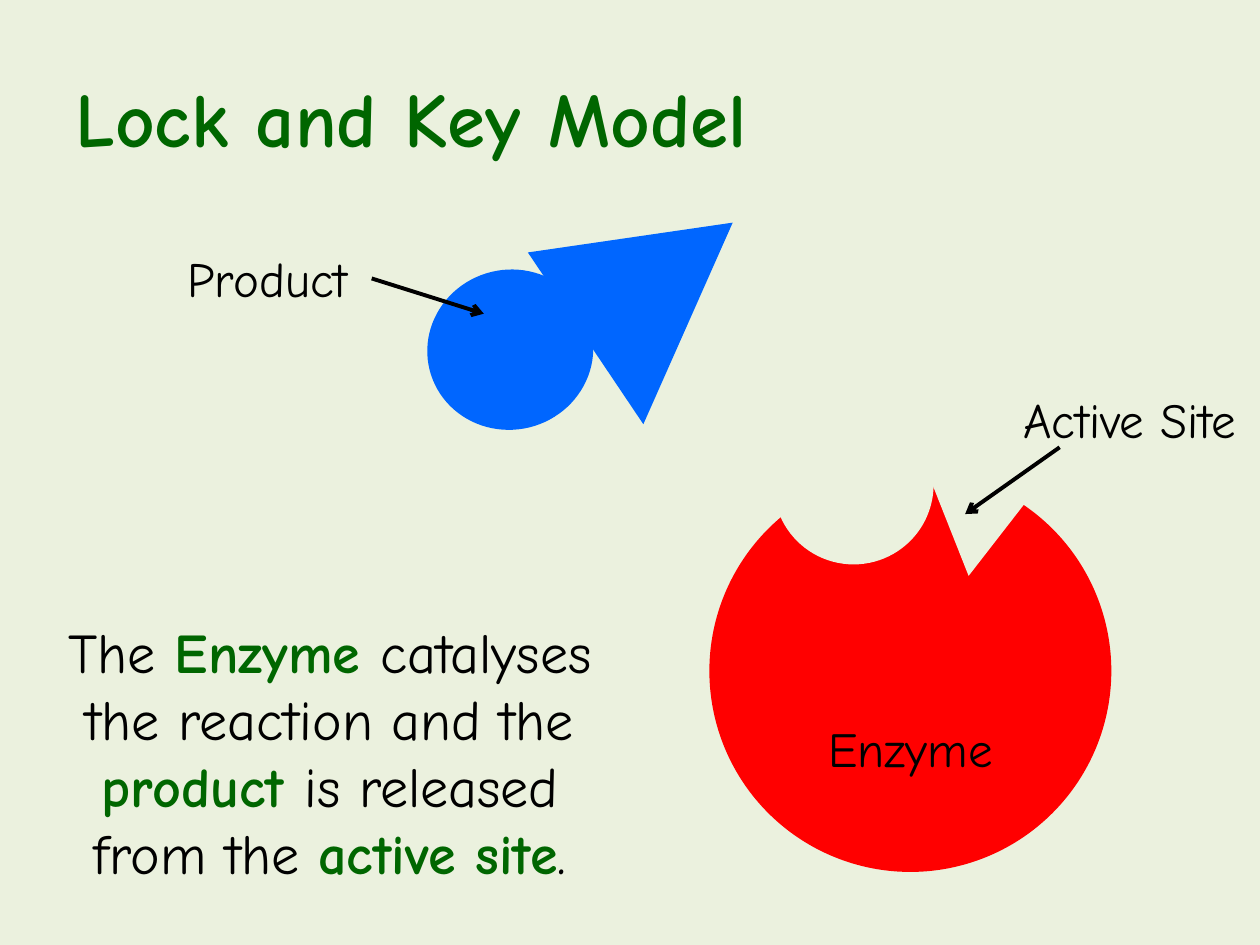
import pptx
import pptx.dml.color
import pptx.enum.shapes
import pptx.enum.text
import pptx.oxml.ns
import pptx.util
import lxml.etree

Inches = pptx.util.Inches
Kind = pptx.enum.shapes.MSO_SHAPE
Align = pptx.enum.text.PP_ALIGN
Anchor = pptx.enum.text.MSO_ANCHOR
FONT = "Comic Neue"
PAPER, GREEN, BLACK = "EBF1DE", "006600", "000000"
RED, BLUE = "FF0000", "0066FF"


def color(code):
    """Turn a hex string into a colour."""
    return pptx.dml.color.RGBColor.from_string(code)


def write(shape, parts, size=28, align=Align.CENTER, anchor=Anchor.TOP):
    """Fill a shape with one paragraph of (text, strong) parts."""
    frame = shape.text_frame
    frame.word_wrap = True
    frame.auto_size = pptx.enum.text.MSO_AUTO_SIZE.NONE
    frame.vertical_anchor = anchor
    para = frame.paragraphs[0]
    para.alignment = align
    for text, strong in parts:
        run = para.add_run()
        run.text = text
        run.font.name = FONT
        run.font.size = pptx.util.Pt(size)
        run.font.bold = strong
        run.font.color.rgb = color(GREEN if strong else BLACK)


def add_text(slide, box, parts, **style):
    """Add a text box at the given box."""
    write(slide.shapes.add_textbox(*map(Inches, box)), parts, **style)


def add_solid(group, kind, box, fill, turn=0):
    """Add a plain filled shape to a group."""
    shape = group.shapes.add_shape(kind, *map(Inches, box))
    shape.rotation = turn
    shape.shadow.inherit = False
    shape.fill.solid()
    shape.fill.fore_color.rgb = color(fill)
    shape.line.fill.background()


def add_arrow(slide, start, end):
    """Draw an arrow between two points."""
    line = slide.shapes.add_connector(
        pptx.enum.shapes.MSO_CONNECTOR.STRAIGHT, *map(Inches, start + end))
    line.line.color.rgb = color(BLACK)
    line.line.width = pptx.util.Pt(2.25)
    qn = pptx.oxml.ns.qn
    tail = lxml.etree.SubElement(line.line._get_or_add_ln(), qn("a:tailEnd"))
    tail.set("type", "arrow")
    lxml.etree.SubElement(line._element.spPr, qn("a:effectLst"))


def add_title(slide, box):
    """Place the slide title."""
    title = slide.shapes.title
    title.left, title.top, title.width, title.height = map(Inches, box)
    write(title, [("Lock and Key Model", True)], size=44,
          align=Align.LEFT, anchor=Anchor.MIDDLE)


def add_enzyme(slide, left, top, size):
    """Draw the enzyme disc with its notched active site and labels."""
    group = slide.shapes.add_group_shape()
    add_solid(group, Kind.OVAL, (left, top, size, size), RED)
    add_solid(group, Kind.OVAL, (left + 0.51, top - 0.52, 1.27, 1.27), PAPER)
    add_solid(group, Kind.ISOSCELES_TRIANGLE,
              (left + 1.44, top - 0.42, 1.17, 0.99), PAPER, turn=307.8)
    add_text(slide, (left + 0.46, top + 1.92, 2.27, 0.57), [("Enzyme", False)])
    add_text(slide, (left + 2.2, top - 0.69, 2.27, 1.04),
             [("Active Site", False)])
    add_arrow(slide, (left + 2.78, top - 0.18), (left + 2.03, top + 0.35))


def add_product(slide, left, top):
    """Draw the released product with its label."""
    group = slide.shapes.add_group_shape()
    add_solid(group, Kind.OVAL, (left + 2.4, top + 0.22, 1.32, 1.27), BLUE,
              turn=346.1)
    add_solid(group, Kind.ISOSCELES_TRIANGLE,
              (left + 2.96, top - 0.33, 1.75, 1.39), BLUE, turn=293.9)
    add_text(slide, (left, top, 2.27, 0.57), [("Product", False)])
    add_arrow(slide, (left + 1.96, top + 0.29), (left + 2.85, top + 0.57))


def add_note(slide, box):
    """Place the sentence that explains the step."""
    add_text(slide, box, [
        ("The ", False), ("Enzyme ", True),
        ("catalyses the reaction and the ", False), ("product ", True),
        ("is released from the ", False), ("active site", True),
        (".", False)], size=32)


def main():
    """Build and save the slide."""
    deck = pptx.Presentation()
    deck.slide_width, deck.slide_height = Inches(10), Inches(7.5)
    slide = deck.slides.add_slide(deck.slide_layouts[5])
    slide.background.fill.solid()
    slide.background.fill.fore_color.rgb = color(PAPER)
    add_title(slide, (0.5, 0.3, 9, 1.25))
    add_enzyme(slide, 5.63, 3.73, 3.19)
    add_product(slide, 0.99, 1.92)
    add_note(slide, (0.19, 4.85, 4.86, 2.26))
    deck.save("out.pptx")


if __name__ == "__main__":
    main()
